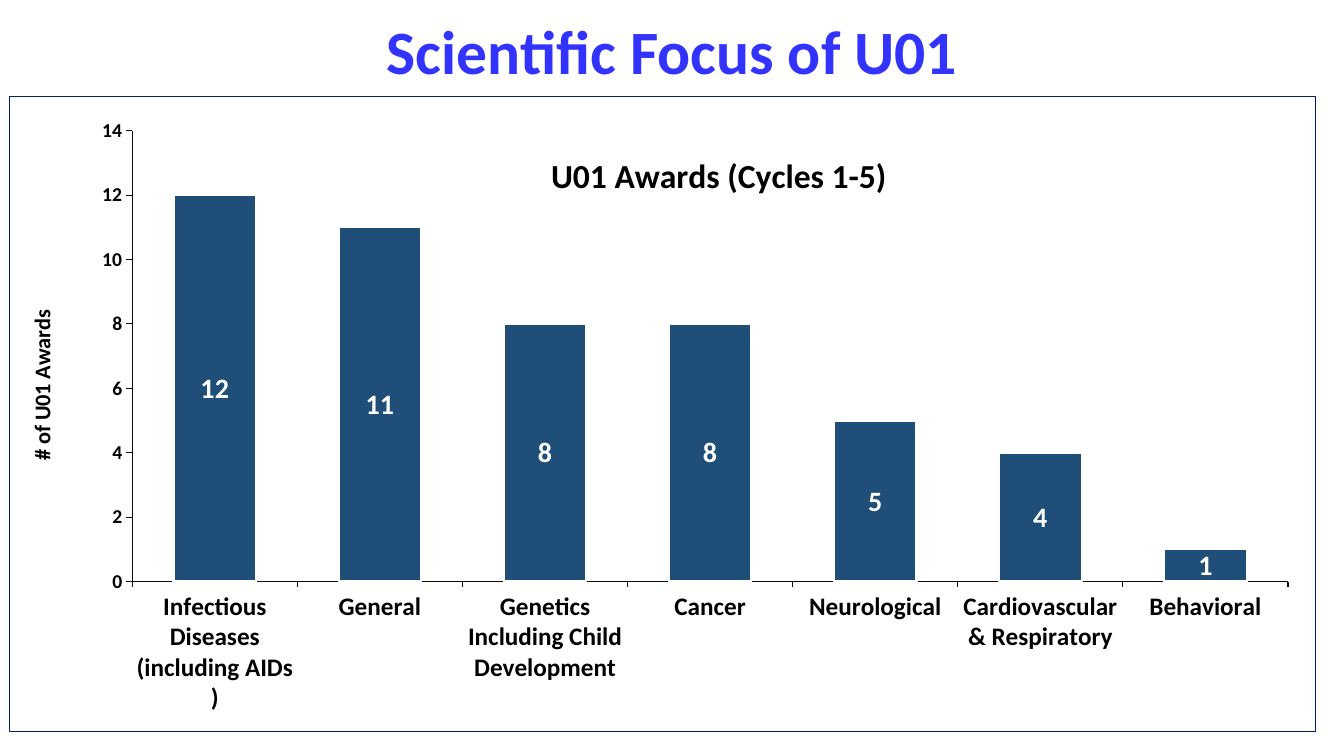
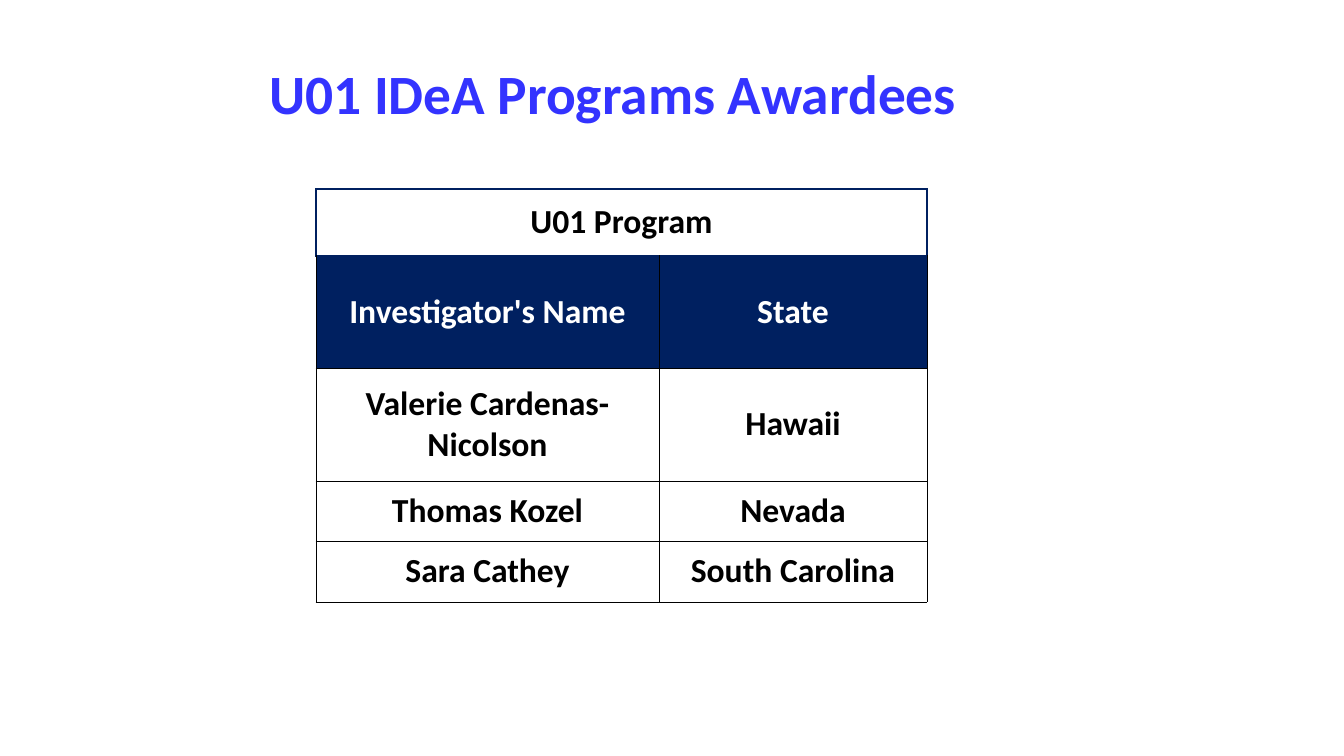
from lxml import etree
from pptx import Presentation
from pptx.chart.data import CategoryChartData as Data
from pptx.dml.color import RGBColor
from pptx.enum.chart import XL_CHART_TYPE as Kind, XL_LABEL_POSITION as Spot
from pptx.enum.chart import XL_TICK_MARK as Tick
from pptx.enum.text import MSO_ANCHOR as Anchor, PP_ALIGN as Align
from pptx.oxml import parse_xml
from pptx.oxml.ns import nsdecls, qn
from pptx.util import Pt

# Shared scale and style
PX = 9144000 / 1008
FACE = "Calibri"
BLUE, NAVY, STEEL = "3333FF", "002060", "1F4E79"
INK, BLACK, WHITE = "0D0D0D", "000000", "FFFFFF"

AWARDS = {
    "Infectious Diseases (including AIDs )": 12,
    "General": 11,
    "Genetics Including Child Development": 8,
    "Cancer": 8,
    "Neurological": 5,
    "Cardiovascular & Respiratory": 4,
    "Behavioral": 1,
}
ROWS = [
    ("U01 Program", ""),
    ("Investigator's Name", "State"),
    ("Valerie Cardenas-Nicolson", "Hawaii"),
    ("Thomas Kozel", "Nevada"),
    ("Sara Cathey", "South Carolina"),
]


def px(*sizes):
    return [round(size * PX) for size in sizes]


def color(code):
    return RGBColor.from_string(code)


def style(font, size, code):
    font.name, font.size, font.bold = FACE, Pt(size), True
    font.color.rgb = color(code)


def stroke(line, code, width):
    line.color.rgb = color(code)
    line.width = Pt(width)


def heading(slide, text, box, size):
    frame = slide.shapes.add_textbox(*px(*box)).text_frame
    frame.word_wrap = True
    frame.vertical_anchor = Anchor.MIDDLE
    para = frame.paragraphs[0]
    para.text, para.alignment, para.line_spacing = text, Align.CENTER, 0.9
    style(para.font, size, BLUE)


# Chart parts
def place(node, target="", **spots):
    """Give a chart title or plot area a fixed place, in parts of the chart."""
    for old in node.findall(qn("c:layout")):
        node.remove(old)
    layout = etree.Element(qn("c:layout"))
    manual = etree.SubElement(layout, qn("c:manualLayout"))
    if target:
        etree.SubElement(manual, qn("c:layoutTarget")).set("val", target)
    for key in "xy":
        etree.SubElement(manual, qn(f"c:{key}Mode")).set("val", "edge")
    for key, value in spots.items():
        etree.SubElement(manual, qn(f"c:{key}")).set("val", str(value))
    node.insert(0 if node.find(qn("c:tx")) is None else 1, layout)


def label(title, text, size, x, y):
    para = title.text_frame.paragraphs[0]
    para.text = text
    style(para.font, size, BLACK)
    place(title.element, x=x, y=y)


def frame(chart, code, width):
    chart.element.find(qn("c:chart")).addnext(parse_xml(
        f'<c:spPr {nsdecls("c", "a")}><a:noFill/><a:ln w="{Pt(width)}">'
        f'<a:solidFill><a:srgbClr val="{code}"/></a:solidFill></a:ln></c:spPr>'))


def axis(item, size):
    item.has_major_gridlines = False
    item.major_tick_mark, item.minor_tick_mark = Tick.OUTSIDE, Tick.NONE
    style(item.tick_labels.font, size, BLACK)
    stroke(item.format.line, INK, 0.75)


def bars(slide, awards, box):
    data = Data()
    data.categories = list(awards)
    data.add_series("Series 1", awards.values())
    chart = slide.shapes.add_chart(Kind.COLUMN_CLUSTERED, *px(*box), data).chart
    frame(chart, NAVY, 0.75)
    style(chart.font, 10, INK)
    chart.has_legend = False
    chart.has_title = True
    label(chart.chart_title, "U01 Awards (Cycles 1-5)", 24, 0.41, 0.08)
    place(chart.element.find(".//" + qn("c:plotArea")), "inner",
          x=0.094, y=0.054, w=0.885, h=0.71)

    # Axes
    axis(chart.category_axis, 18)
    scale = chart.value_axis
    axis(scale, 14)
    scale.minimum_scale, scale.maximum_scale, scale.major_unit = 0, 14, 2
    label(scale.axis_title, "# of U01 Awards", 16, 0.01, 0.33)

    # Columns and their values
    plot = chart.plots[0]
    plot.gap_width, plot.vary_by_categories = 100, False
    look = plot.series[0].format
    look.fill.solid()
    look.fill.fore_color.rgb = color(STEEL)
    stroke(look.line, WHITE, 1.5)
    plot.has_data_labels = True
    tags = plot.data_labels
    tags.show_value, tags.position = True, Spot.CENTER
    style(tags.font, 20, WHITE)


# Table parts
def border(cell, code, width):
    props = cell._tc.get_or_add_tcPr()
    for spot, side in enumerate("LRTB"):
        props.insert(spot, parse_xml(
            f'<a:ln{side} {nsdecls("a")} w="{Pt(width)}"><a:solidFill>'
            f'<a:srgbClr val="{code}"/></a:solidFill></a:ln{side}>'))


def fill(cell, text, head):
    cell.margin_left = cell.margin_right = 0
    cell.margin_top = cell.margin_bottom = 0
    cell.vertical_anchor = Anchor.MIDDLE
    if head:
        cell.fill.solid()
        cell.fill.fore_color.rgb = color(NAVY)
    else:
        cell.fill.background()
    para = cell.text_frame.paragraphs[0]
    para.text, para.alignment = text, Align.CENTER
    style(para.font, 24, WHITE if head else BLACK)


def grid(slide, rows, left, top, wides, highs):
    box = px(left, top, sum(wides), sum(highs))
    table = slide.shapes.add_table(len(rows), len(wides), *box).table
    table.first_row = table.horz_banding = False
    for col, wide in zip(table.columns, px(*wides)):
        col.width = wide
    for row, high in zip(table.rows, px(*highs)):
        row.height = high
    for r, texts in enumerate(rows):
        for c, text in enumerate(texts):
            cell = table.cell(r, c)
            fill(cell, text, r == 1)
            border(cell, *((BLACK, 0.5) if r else (NAVY, 1)))
    table.cell(0, 0).merge(table.cell(0, len(wides) - 1))


def main():
    deck = Presentation()
    deck.slide_width, deck.slide_height = px(1344, 756)
    focus, people = [deck.slides.add_slide(deck.slide_layouts[6]) for _ in range(2)]

    # Awards by field
    heading(focus, "Scientific Focus of U01", (93, 2, 1159, 105), 44)
    bars(focus, AWARDS, (9, 96, 1307, 636))

    # Awardees by state
    heading(people, "U01 IDeA Programs Awardees", (213, 44, 800, 105), 39.6)
    grid(people, ROWS, 316, 189, (343, 268), (67, 112, 113, 60, 61))

    deck.save("out.pptx")


if __name__ == "__main__":
    main()
